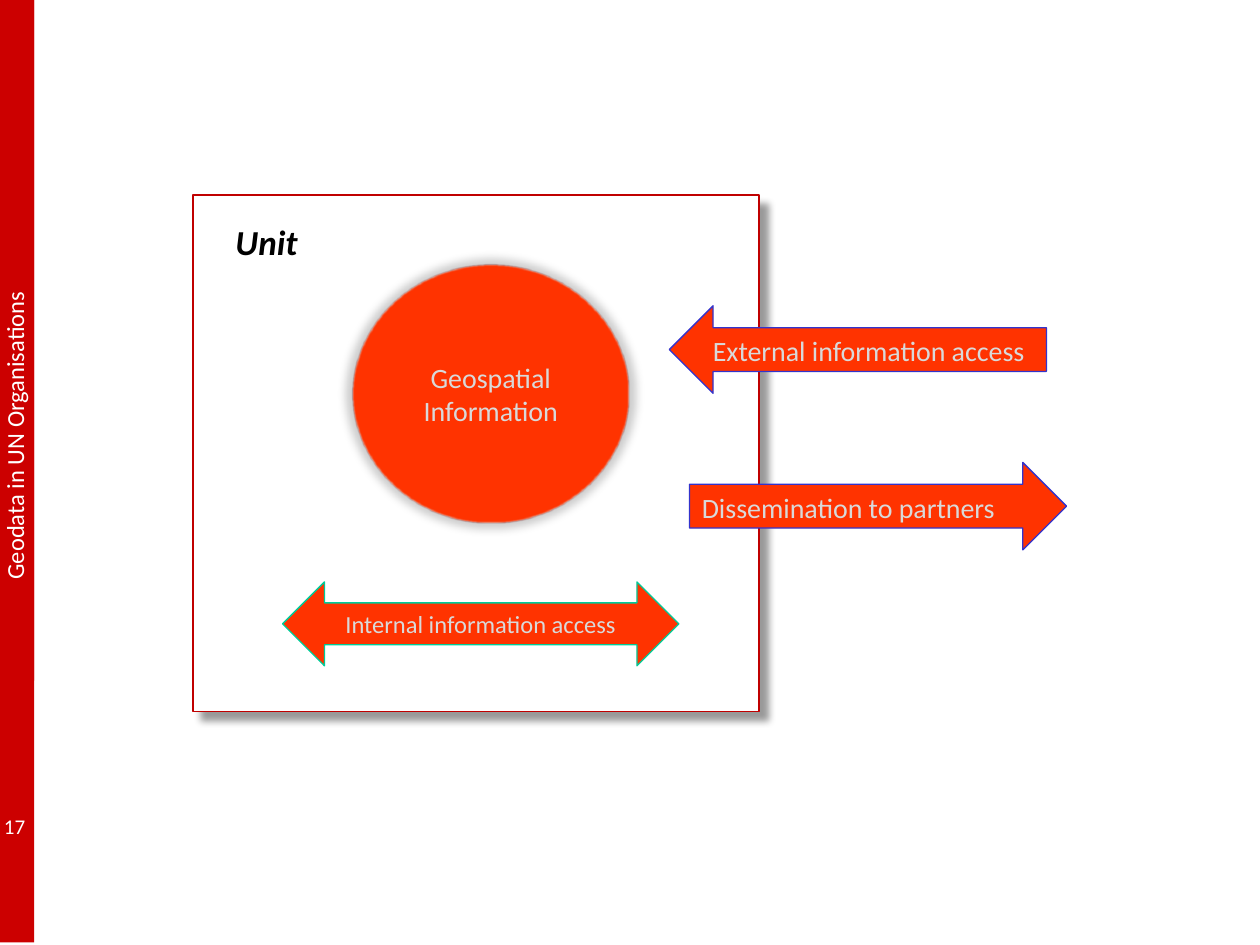
from lxml import etree
from pptx import Presentation
from pptx.dml.color import RGBColor
from pptx.enum.shapes import MSO_SHAPE as Preset
from pptx.enum.text import MSO_ANCHOR as Anchor, PP_ALIGN as Align
from pptx.oxml.ns import qn
from pptx.util import Pt

WHITE = RGBColor(0xFF, 0xFF, 0xFF)
BLACK = RGBColor(0, 0, 0)
LIGHT_GREY = RGBColor(0xD9, 0xD9, 0xD9)
RED = RGBColor(0xCC, 0, 0)
DARK_RED = RGBColor(0xC0, 0, 0)
MAROON = RGBColor(0x76, 0, 0)
ORANGE = RGBColor(0xFF, 0x33, 0)
GREEN = RGBColor(0, 0xCC, 0x99)
BLUE = RGBColor(0x33, 0x33, 0xCC)


class Canvas:
    font_name = "Calibri"

    def __init__(self, slide):
        self.slide = slide

    def label(self, shape, text, size, color, align=Align.LEFT, anchor=Anchor.TOP, wrap=True):
        """Put one styled paragraph in the shape and return its font."""
        frame = shape.text_frame
        frame.word_wrap = wrap
        frame.vertical_anchor = anchor
        paragraph = frame.paragraphs[0]
        paragraph.text = text
        paragraph.alignment = align
        font = paragraph.font
        font.name = self.font_name
        font.size = Pt(size)
        font.color.rgb = color
        return font

    def shape(self, preset, left, top, width, height, fill, line=None):
        shape = self.slide.shapes.add_shape(preset, Pt(left), Pt(top), Pt(width), Pt(height))
        shape.shadow.inherit = False
        shape.fill.solid()
        shape.fill.fore_color.rgb = fill
        if line is None:
            shape.line.fill.background()
        else:
            shape.line.color.rgb = line
            shape.line.width = Pt(0.75)
        return shape

    def text_box(self, left, top, width, height, text, size, color, **layout):
        box = self.slide.shapes.add_textbox(Pt(left), Pt(top), Pt(width), Pt(height))
        return box, self.label(box, text, size, color, **layout)

    def shadow(self, shape, opacity, **geometry):
        """Add a black outer shadow; opacity is in percent."""
        effects = shape.element.spPr.find(qn("a:effectLst"))
        values = {name: str(value) for name, value in geometry.items()}
        shadow = etree.SubElement(effects, qn("a:outerShdw"), values, rotWithShape="0")
        color = etree.SubElement(shadow, qn("a:srgbClr"), val=str(BLACK))
        etree.SubElement(color, qn("a:alpha"), val=str(opacity * 1000))
        return effects


def draw_sidebar(canvas):
    for height in (538.5, 389):
        canvas.shape(Preset.RECTANGLE, 0, 0, 19.5, height, RED)
    title, _ = canvas.text_box(-82, 235.5, 181, 24.5, "Geodata in UN Organisations",
                               14, WHITE, wrap=False)
    title.rotation = 270
    canvas.text_box(-8.5, 461.5, 30, 24, "17", 12, WHITE, align=Align.RIGHT)


def draw_unit(canvas):
    unit = canvas.shape(Preset.RECTANGLE, 110.25, 111.5, 323.5, 295, WHITE, DARK_RED)
    canvas.shadow(unit, 40, blurRad=Pt(4), dist=Pt(7), dir=45 * 60000, algn="tl")

    core = canvas.shape(Preset.OVAL, 201.5, 151.25, 158, 147.5, ORANGE, MAROON)
    effects = canvas.shadow(core, 20, blurRad=Pt(5), sx=106000, sy=106000, algn="ctr")
    etree.SubElement(effects, qn("a:softEdge"), rad=str(Pt(1)))
    canvas.label(core, "Geospatial Information", 16, LIGHT_GREY, Align.CENTER, Anchor.MIDDLE)

    _, font = canvas.text_box(127.5, 122.5, 50.5, 31.5, "Unit", 20, BLACK, wrap=False)
    font.bold = font.italic = True


def draw_arrows(canvas):
    arrows = [
        (Preset.LEFT_RIGHT_ARROW, 161.5, 332.5, 226.5, 48, GREEN,
         "Internal information access", 14, Align.CENTER),
        (Preset.RIGHT_ARROW, 394, 264.25, 215.5, 50, BLUE,
         "Dissemination to partners", 16, Align.LEFT),
        (Preset.LEFT_ARROW, 382.5, 174.75, 215.5, 50, BLUE,
         "External information access", 16, Align.CENTER),
    ]
    for preset, left, top, width, height, line, text, size, align in arrows:
        arrow = canvas.shape(preset, left, top, width, height, ORANGE, line)
        canvas.label(arrow, text, size, LIGHT_GREY, align)


def main():
    presentation = Presentation()
    presentation.slide_width, presentation.slide_height = Pt(720), Pt(540)
    canvas = Canvas(presentation.slides.add_slide(presentation.slide_layouts[6]))
    draw_sidebar(canvas)
    draw_unit(canvas)
    draw_arrows(canvas)
    presentation.save("out.pptx")


if __name__ == "__main__":
    main()
